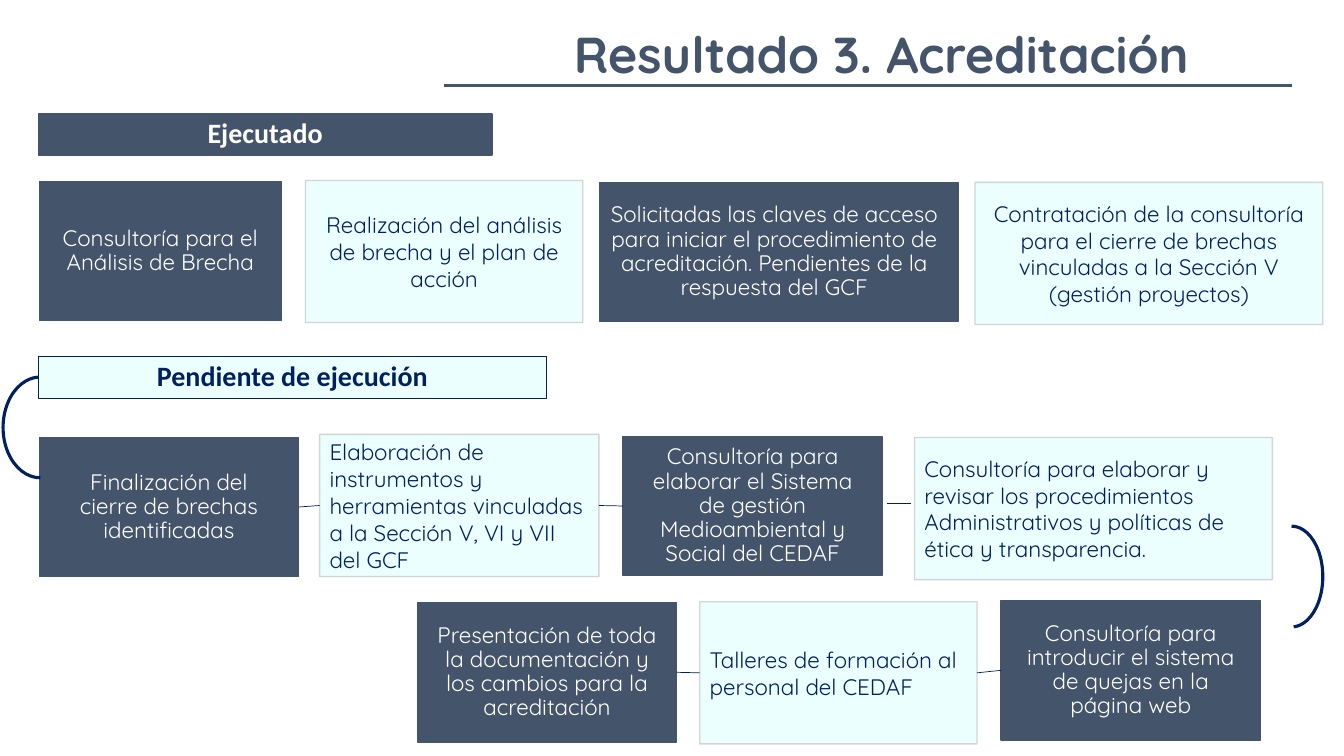
from dataclasses import dataclass

from lxml import etree
from pptx import Presentation
from pptx import util as u
from pptx.dml.color import RGBColor
from pptx.enum import shapes, text
from pptx.oxml.ns import qn


@dataclass(frozen=True)
class Theme:
    slate: str = "44546A"
    navy: str = "002060"
    ice: str = "EBFFFF"
    silver: str = "CFD1D4"
    white: str = "FFFFFF"
    body_font: str = "Quicksand"
    heading_font: str = "Calibri"
    title_size: int = 36
    heading_size: int = 20
    body_size: int = 16


THEME = Theme()
CENTER, LEFT = text.PP_ALIGN.CENTER, text.PP_ALIGN.LEFT
DARK_INSETS = (0.19, 0.11, 0.19, 0.11)
LIGHT_INSETS = (0.1, 0.05, 0.1, 0.05)


def rgb(value):
    return RGBColor.from_string(value)


def set_opacity(color_format_owner, percent):
    for color in color_format_owner.iter(qn("a:srgbClr")):
        etree.SubElement(color, qn("a:alpha"), val=str(percent * 1000))


def write(frame, words, size, font, color, bold=False, align=CENTER,
          spacing=0.9, insets=DARK_INSETS):
    frame.word_wrap = True
    frame.auto_size = text.MSO_AUTO_SIZE.NONE
    frame.vertical_anchor = text.MSO_ANCHOR.MIDDLE
    (frame.margin_left, frame.margin_top,
     frame.margin_right, frame.margin_bottom) = map(u.Inches, insets)
    paragraph = frame.paragraphs[0]
    paragraph.alignment = align
    paragraph.line_spacing = spacing
    run = paragraph.add_run()
    run.text = words
    run.font.size, run.font.name, run.font.bold = u.Pt(size), font, bold
    run.font.color.rgb = rgb(color)


def add_rect(slide, box, fill, line, line_width=1):
    rect = slide.shapes.add_shape(shapes.MSO_SHAPE.RECTANGLE, *map(u.Inches, box))
    rect.shadow.inherit = False
    rect.fill.solid()
    rect.fill.fore_color.rgb = rgb(fill)
    rect.line.color.rgb = rgb(line)
    rect.line.width = u.Pt(line_width)
    return rect


def add_line(slide, start, end, color, width):
    line = slide.shapes.add_connector(
        shapes.MSO_CONNECTOR.STRAIGHT, *map(u.Inches, start + end))
    line.line.color.rgb = rgb(color)
    line.line.width = u.Pt(width)
    etree.SubElement(line._element.spPr, qn("a:effectLst"))
    return line


def add_title(slide, box, words):
    title = slide.shapes.title
    title.left, title.top, title.width, title.height = map(u.Inches, box)
    write(title.text_frame, words, THEME.title_size, THEME.body_font, THEME.slate,
          bold=True, insets=LIGHT_INSETS)
    left, top, width, height = box
    rule_y = top + height - 0.12
    add_line(slide, (left - 0.45, rule_y), (left + width + 0.18, rule_y),
             THEME.slate, 2.25)


def add_heading(slide, box, words, fill, line, color, line_width):
    heading = add_rect(slide, box, fill, line, line_width)
    write(heading.text_frame, words, THEME.heading_size, THEME.heading_font, color,
          bold=True)


def add_dark_step(slide, box, words, insets=DARK_INSETS):
    step = add_rect(slide, box, THEME.slate, THEME.slate)
    write(step.text_frame, words, THEME.body_size, THEME.body_font, THEME.white,
          insets=insets)
    return step


def add_light_step(slide, box, words, align):
    step = add_rect(slide, box, THEME.ice, THEME.silver)
    set_opacity(step._element.spPr, 90)
    write(step.text_frame, words, THEME.body_size, THEME.body_font, THEME.navy,
          align=align, spacing=1, insets=LIGHT_INSETS)
    return step


def add_step_row(slide, top, steps, first_dark=True, light_align=LEFT):
    """Place (left, drop, width, words) steps, alternating dark and light."""
    row = []
    for index, (left, drop, width, words, *insets) in enumerate(steps):
        if (index % 2 == 0) == first_dark:
            step = add_dark_step(slide, (left, top + drop, width, 1.38), words, *insets)
        else:
            step = add_light_step(slide, (left, top + drop, width, 1.41), words, light_align)
        row.append(step)
    return row


def join(slide, before, after):
    link = add_line(slide, (0, 0), (1, 0), THEME.navy, 0.5)
    link.begin_connect(before, 3)
    link.end_connect(after, 1)


def add_turn(slide, box, rotation=0):
    turn = slide.shapes.add_shape(shapes.MSO_SHAPE.ARC, *map(u.Inches, box))
    turn.adjustments[0], turn.adjustments[1] = 162, 52.568
    turn.rotation = rotation
    turn.shadow.inherit = False
    turn.fill.background()
    turn.line.color.rgb = rgb(THEME.navy)
    turn.line.width = u.Pt(2.25)


def add_done_region(slide, left, top):
    add_heading(slide, (left, top, 4.5, 0.41), "Ejecutado",
                THEME.slate, THEME.slate, THEME.white, 1)
    add_step_row(slide, top + 0.66, [
        (left + 0.01, 0.01, 2.4, "Consultoría para el Análisis de Brecha"),
        (left + 2.65, 0, 2.75, "Realización del análisis de brecha y el plan de acción"),
        (left + 5.57, 0.02, 3.55, "Solicitadas las claves de acceso para iniciar el "
         "procedimiento de acreditación. Pendientes de la respuesta del GCF",
         (0.1, 0.11, 0.19, 0.11)),
        (left + 9.29, 0.02, 3.45, "Contratación de la consultoría para el cierre de "
         "brechas vinculadas a la Sección V (gestión proyectos)"),
    ], light_align=CENTER)


def add_pending_region(slide, left, top):
    add_heading(slide, (left, top, 5.04, 0.41), "Pendiente de ejecución",
                THEME.ice, THEME.navy, THEME.navy, 0.75)

    # First row runs left to right
    closing, instruments, system, _ = add_step_row(slide, top + 0.77, [
        (left + 0.01, 0.03, 2.57, "Finalización del cierre de brechas identificadas"),
        (left + 2.79, 0, 2.77, "Elaboración de instrumentos y herramientas vinculadas "
         "a la Sección V, VI y VII del GCF"),
        (left + 5.8, 0.02, 2.57, "Consultoría para elaborar el Sistema de gestión "
         "Medioambiental y Social del CEDAF"),
        (left + 8.69, 0.03, 3.55, "Consultoría para elaborar y revisar los procedimientos "
         "Administrativos y políticas de ética y transparencia."),
    ])
    join(slide, closing, instruments)
    join(slide, instruments, system)
    link_y = top + 1.45
    add_line(slide, (left + 8.42, link_y), (left + 8.66, link_y), THEME.navy, 0.5)

    # Second row runs back from right to left
    accreditation, workshops, complaints = add_step_row(slide, top + 2.42, [
        (left + 3.76, 0.02, 2.57, "Presentación de toda la documentación y los cambios "
         "para la acreditación"),
        (left + 6.56, 0.01, 2.75, "Talleres de formación al personal del CEDAF"),
        (left + 9.55, 0, 2.57, "Consultoría para introducir el sistema de quejas en la "
         "página web"),
    ])
    join(slide, accreditation, workshops)
    join(slide, workshops, complaints)

    # Curved turns into and between the rows
    add_turn(slide, (left - 0.35, top + 0.2, 0.74, 1), rotation=180)
    add_turn(slide, (left + 12.12, top + 1.68, 0.62, 1))


def main():
    deck = Presentation()
    deck.slide_width, deck.slide_height = u.Inches(13.33), u.Inches(7.5)
    slide = deck.slides.add_slide(deck.slide_layouts[5])
    add_title(slide, (4.85, 0.16, 7.78, 0.81), "Resultado 3. Acreditación")
    add_done_region(slide, 0.38, 1.13)
    add_pending_region(slide, 0.38, 3.54)
    deck.save("out.pptx")


if __name__ == "__main__":
    main()
